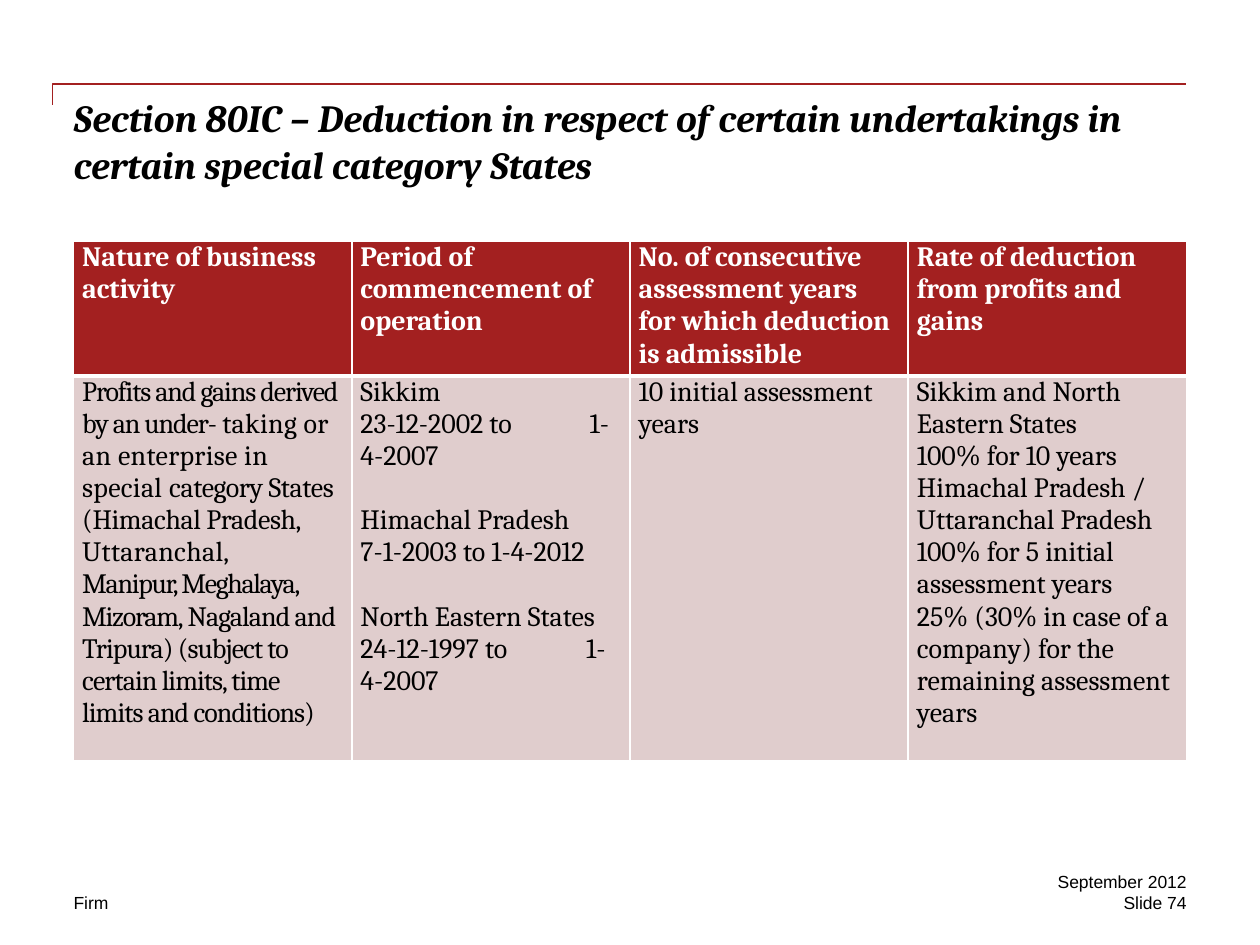
import pptx
import pptx.dml.color
import pptx.enum.text
import pptx.oxml
import pptx.oxml.ns
import pptx.util
from pptx.util import Pt

RED = pptx.dml.color.RGBColor(0xA3, 0x20, 0x20)
PINK = pptx.dml.color.RGBColor(0xE0, 0xCD, 0xCD)
WHITE = pptx.dml.color.RGBColor(0xFF, 0xFF, 0xFF)
BLACK = pptx.dml.color.RGBColor(0, 0, 0)

HEADINGS = [
    "Nature of business activity",
    "Period of commencement of operation",
    "No. of consecutive assessment years for which deduction is admissible",
    "Rate of deduction from profits and gains",
]
# Text and letter spacing in hundredths of a point; a newline is a line break
ACTIVITY = [
    ("Profits and gains derived by an under- ", -60),
    ("taking or an enterprise in special ", 20),
    ("category States (Himachal Pradesh, ", -20),
    ("Uttaranchal,\n", 20),
    ("Manipur, Meghalaya, Mizoram, ", -70),
    ("Nagaland and Tripura) (subject to certain limits, time limits and conditions)", -50),
]
# State, dates, and tab stop of the end date
PERIODS = [
    ("Sikkim", "23-12-2002 to\t1-4-2007", 131),
    ("Himachal Pradesh", "7-1-2003 to 1-4-2012", None),
    ("North Eastern States", "24-12-1997 to\t1-4-2007", 129),
]
YEARS = ["10 initial assessment years"]
RATES = [
    "Sikkim and North Eastern States",
    "100% for 10 years",
    "Himachal Pradesh / Uttaranchal Pradesh",
    "100% for 5 initial assessment years",
    "25% (30% in case of a company) for the remaining assessment years",
]


def add_text(left, top, width, height, text, name, size):
    box = slide.shapes.add_textbox(Pt(left), Pt(top), Pt(width), Pt(height))
    frame = box.text_frame
    frame.word_wrap = True
    frame.margin_left = frame.margin_top = frame.margin_right = frame.margin_bottom = 0
    para = frame.paragraphs[0]
    para.text = text
    para.font.name, para.font.size = name, Pt(size)
    para.font.color.rgb = BLACK
    return para


def add_borders(cell, bottom_width):
    """Draw white cell borders, which must precede the fill in the XML."""
    properties = cell._tc.get_or_add_tcPr()
    for side, width in (("L", 1), ("R", 1), ("T", 1), ("B", bottom_width)):
        properties.append(pptx.oxml.parse_xml(
            f'<a:ln{side} {pptx.oxml.ns.nsdecls("a")} w="{Pt(width)}">'
            f'<a:solidFill><a:srgbClr val="{WHITE}"/></a:solidFill></a:ln{side}>'))


deck = pptx.Presentation()
deck.slide_width, deck.slide_height = Pt(720), Pt(540)
slide = deck.slides.add_slide(deck.slide_layouts[6])

# Corner rule above the title
builder = slide.shapes.build_freeform(Pt(30), Pt(60))
builder.add_line_segments([(Pt(30), Pt(48)), (Pt(678), Pt(48))], close=False)
rule = builder.convert_to_shape()
rule.shadow.inherit = False
rule.fill.background()
rule.line.color.rgb = RED
rule.line.width = Pt(1)

title = add_text(42, 54, 636, 72,
                 "Section 80IC – Deduction in respect of certain undertakings "
                 "in certain special category States", "Cambria", 22)
title.font.bold = title.font.italic = True

# Deduction table
table = slide.shapes.add_table(2, 4, Pt(42), Pt(138), Pt(636), Pt(293)).table
for column in table.columns:
    column.width = Pt(159)
table.rows[0].height, table.rows[1].height = Pt(73), Pt(220)

for cell, heading in zip(table.rows[0].cells, HEADINGS):
    cell.text = heading
activity, period, years, rates = table.rows[1].cells
years.text = "\n".join(YEARS)
rates.text = "\n".join(RATES)

para = activity.text_frame.paragraphs[0]
para.space_before = Pt(1.8)
for text, spacing in ACTIVITY:
    span = para.add_run()
    span.text = text.rstrip("\n")
    span.font._element.set("spc", str(spacing))
    if text.endswith("\n"):
        para.add_line_break()

period.text = "\n".join(f"{state}\n{dates}" for state, dates, stop in PERIODS)
paragraphs = period.text_frame.paragraphs
for index, (state, dates, stop) in enumerate(PERIODS):
    if index:
        paragraphs[2 * index].space_before = Pt(18.4)
    if stop:
        paragraphs[2 * index + 1]._p.get_or_add_pPr().append(pptx.oxml.parse_xml(
            f'<a:tabLst {pptx.oxml.ns.nsdecls("a")}>'
            f'<a:tab pos="{Pt(stop)}" algn="l"/></a:tabLst>'))

for row, fill, color, bottom_width in ((0, RED, WHITE, 3), (1, PINK, BLACK, 1)):
    for cell in table.rows[row].cells:
        cell.margin_left = cell.margin_right = Pt(5)
        cell.margin_top = cell.margin_bottom = 0
        add_borders(cell, bottom_width)
        cell.fill.solid()
        cell.fill.fore_color.rgb = fill
        for para in cell.text_frame.paragraphs:
            para.font.name, para.font.size = "Cambria", Pt(16)
            para.font.bold = row == 0
            para.font.color.rgb = color

# Footer
add_text(42, 510, 204, 12, "Firm", "Arial", 10)
for top, text in ((498, "September 2012"), (510, "Slide 74")):
    para = add_text(558, top, 120, 12, text, "Arial", 10)
    para.alignment = pptx.enum.text.PP_ALIGN.RIGHT

deck.save("out.pptx")
